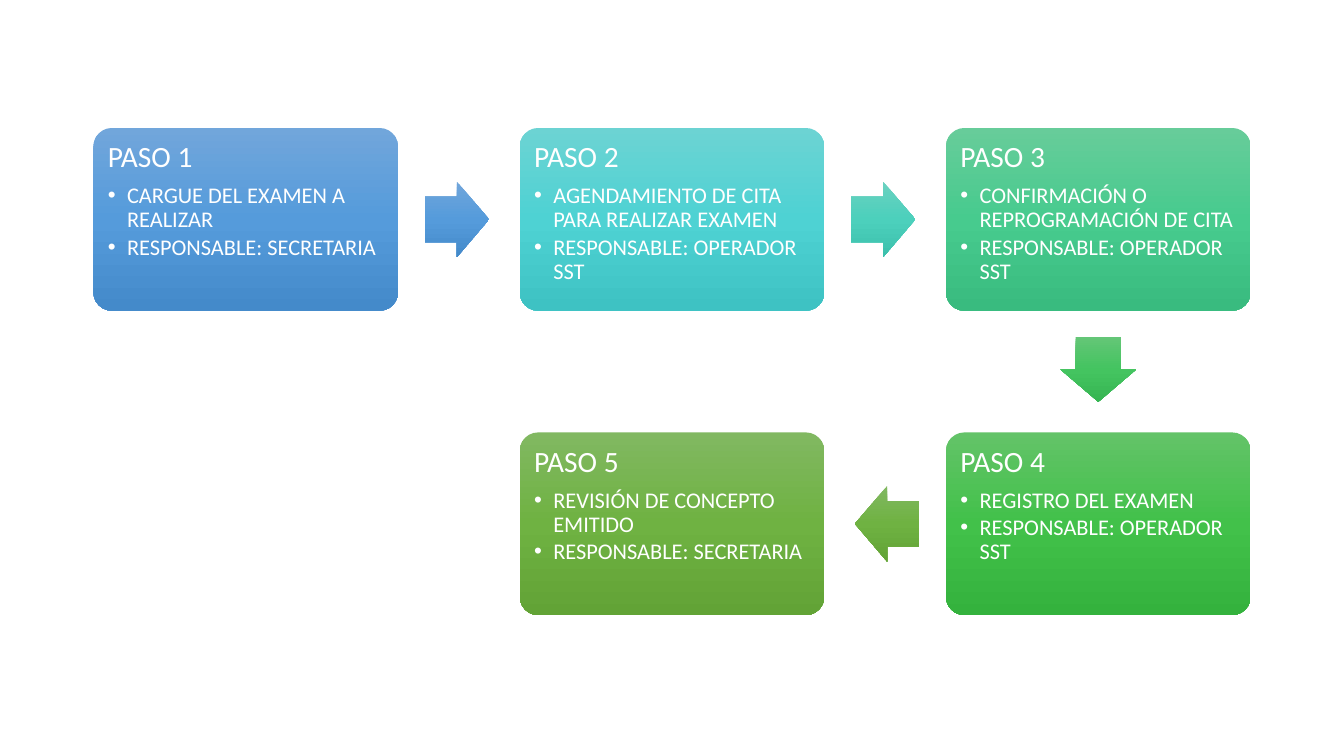
from copy import deepcopy
from dataclasses import dataclass

from lxml.etree import SubElement
from pptx import Presentation
from pptx.dml.color import RGBColor
from pptx.enum.shapes import MSO_SHAPE
from pptx.enum.text import MSO_ANCHOR, PP_ALIGN
from pptx.oxml.ns import qn
from pptx.shapes.autoshape import Shape
from pptx.shapes.shapetree import SlideShapes
from pptx.text.text import _Paragraph
from pptx.util import Inches, Pt

WIDE, HIGH = 13.33, 7.5
CARD_W = 3.02
CARD_H = 0.6 * CARD_W
COL = 1.4 * CARD_W
ROW = CARD_W
LEFT = (WIDE - 2 * COL - CARD_W) / 2
TOP = 1.27
ARROW_W, ARROW_H = 0.64, 0.75
BACK = 0.02
INSET = 0.09
INDENT = 0.19
FONT = "Calibri"
HEAD, BODY = 21, 16

WHITE = RGBColor(0xFF, 0xFF, 0xFF)
BLUE = RGBColor(0x71, 0xA6, 0xDB), RGBColor(0x55, 0x9B, 0xDB), RGBColor(0x44, 0x8A, 0xCA)
CYAN = RGBColor(0x6C, 0xD3, 0xD3), RGBColor(0x4E, 0xD2, 0xD3), RGBColor(0x3E, 0xC2, 0xC3)
TEAL = RGBColor(0x6A, 0xD1, 0xC0), RGBColor(0x4C, 0xD0, 0xBC), RGBColor(0x3C, 0xC0, 0xAC)
MINT = RGBColor(0x67, 0xCC, 0x9A), RGBColor(0x47, 0xCB, 0x8E), RGBColor(0x39, 0xBB, 0x7F)
JADE = RGBColor(0x64, 0xC6, 0x77), RGBColor(0x44, 0xC4, 0x60), RGBColor(0x36, 0xB5, 0x52)
GREEN = RGBColor(0x63, 0xC3, 0x68), RGBColor(0x42, 0xC1, 0x4A), RGBColor(0x34, 0xB2, 0x3D)
OLIVE = RGBColor(0x81, 0xB8, 0x61), RGBColor(0x6F, 0xB2, 0x42), RGBColor(0x62, 0xA3, 0x36)

Shades = tuple[RGBColor, RGBColor, RGBColor]


@dataclass(frozen=True)
class Step:
    col: int
    row: int
    title: str
    task: str
    owner: str
    shades: Shades

    def center(self) -> tuple[float, float]:
        return LEFT + self.col * COL + CARD_W / 2, TOP + self.row * ROW + CARD_H / 2


STEPS = [
    Step(0, 0, "PASO 1", "CARGUE DEL EXAMEN A REALIZAR", "SECRETARIA", BLUE),
    Step(1, 0, "PASO 2", "AGENDAMIENTO DE CITA PARA REALIZAR EXAMEN", "OPERADOR SST", CYAN),
    Step(2, 0, "PASO 3", "CONFIRMACIÓN O REPROGRAMACIÓN DE CITA", "OPERADOR SST", MINT),
    Step(2, 1, "PASO 4", "REGISTRO DEL EXAMEN", "OPERADOR SST", GREEN),
    Step(1, 1, "PASO 5", "REVISIÓN DE CONCEPTO EMITIDO", "SECRETARIA", OLIVE),
]
ARROWS = [BLUE, TEAL, JADE, OLIVE]
TURNS = {(1, 0): 0, (0, 1): 90, (-1, 0): 180}


def paint(shape: Shape, shades: Shades) -> None:
    shape.shadow.inherit = False
    shape.line.fill.background()
    shape.fill.gradient()
    shape.fill.gradient_angle = 270
    grad = shape._element.spPr.find(qn("a:gradFill"))
    grad.set("rotWithShape", "0")
    stops = grad.find(qn("a:gsLst"))
    stops.append(deepcopy(stops[0]))
    for stop, place, shade in zip(shape.fill.gradient_stops, (0, 0.5, 1), shades):
        stop.position = place
        stop.color.rgb = shade


def place(shapes: SlideShapes, kind: MSO_SHAPE, mid: tuple[float, float],
          size: tuple[float, float], shades: Shades) -> Shape:
    (x, y), (w, h) = mid, size
    shape = shapes.add_shape(kind, Inches(x - w / 2), Inches(y - h / 2), Inches(w), Inches(h))
    paint(shape, shades)
    return shape


def write(para: _Paragraph, text: str, size: int, after: float) -> None:
    para.alignment = PP_ALIGN.LEFT
    para.line_spacing = 0.9
    para.space_after = Pt(size * after)
    run = para.add_run()
    run.text = text
    run.font.name = FONT
    run.font.size = Pt(size)
    run.font.color.rgb = WHITE


def bullet(para: _Paragraph) -> None:
    para.level = 1
    props = para._p.get_or_add_pPr()
    props.set("marL", str(Inches(INDENT)))
    props.set("indent", str(-Inches(INDENT)))
    SubElement(props, qn("a:buFont")).set("typeface", "Arial")
    SubElement(props, qn("a:buChar")).set("char", "•")


def draw_card(shapes: SlideShapes, step: Step) -> None:
    card = place(shapes, MSO_SHAPE.ROUNDED_RECTANGLE, step.center(),
                 (CARD_W, CARD_H), step.shades)
    card.adjustments[0] = 0.1
    frame = card.text_frame
    frame.word_wrap = True
    frame.vertical_anchor = MSO_ANCHOR.TOP
    frame.margin_left = frame.margin_right = Inches(INSET)
    frame.margin_top = frame.margin_bottom = Inches(INSET)
    write(frame.paragraphs[0], step.title, HEAD, 0.35)
    for text in (step.task, f"RESPONSABLE: {step.owner}"):
        para = frame.add_paragraph()
        bullet(para)
        write(para, text, BODY, 0.15)


def draw_arrow(shapes: SlideShapes, start: Step, end: Step, shades: Shades) -> None:
    way = end.col - start.col, end.row - start.row
    mid = tuple((a + b) / 2 - BACK * d for a, b, d in zip(start.center(), end.center(), way))
    arrow = place(shapes, MSO_SHAPE.RIGHT_ARROW, mid, (ARROW_W, ARROW_H), shades)
    arrow.adjustments[0] = 0.6
    arrow.adjustments[1] = 0.5
    arrow.rotation = TURNS[way]


def main() -> None:
    deck = Presentation()
    deck.slide_width, deck.slide_height = Inches(WIDE), Inches(HIGH)
    shapes = deck.slides.add_slide(deck.slide_layouts[6]).shapes
    for step in STEPS:
        draw_card(shapes, step)
    for start, end, shades in zip(STEPS, STEPS[1:], ARROWS):
        draw_arrow(shapes, start, end, shades)
    deck.save("out.pptx")


if __name__ == "__main__":
    main()
